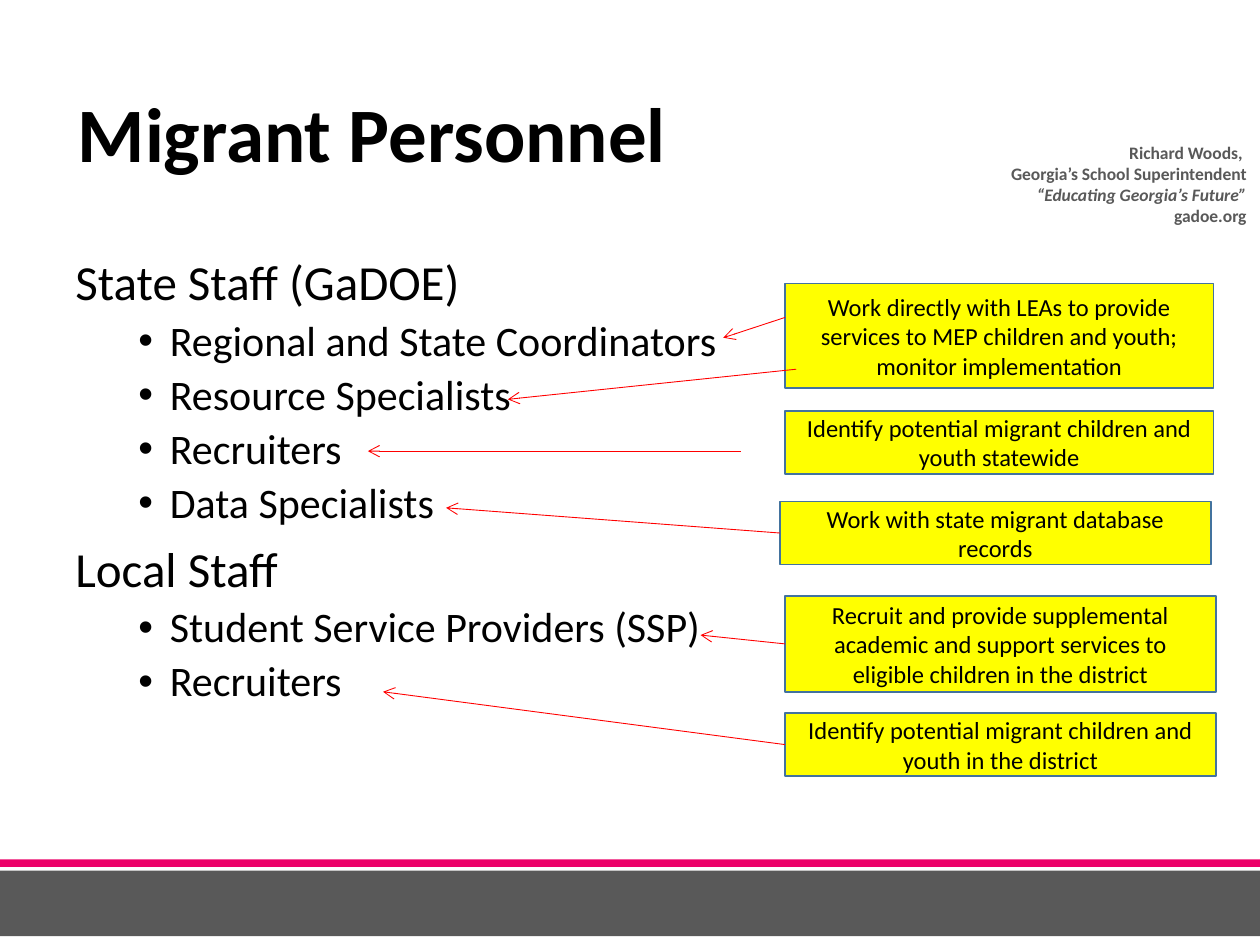
from lxml import etree
from pptx import Presentation
from pptx.dml.color import RGBColor
from pptx.enum import shapes, text
from pptx.oxml.ns import qn
from pptx.util import Pt

FONT = "Calibri"
BLACK, GREY, PINK, YELLOW, BLUE, RED = (
    "000000", "595959", "EC0269", "FFFF00", "43739E", "FF0000")

STAFF = [
    ("State Staff (GaDOE)", [
        "Regional and State Coordinators", "Resource Specialists",
        "Recruiters", "Data Specialists"]),
    ("Local Staff", ["Student Service Providers (SSP)", "Recruiters"]),
]

# Box (left, top, width, height) and wording of each duty
DUTIES = [
    ((448.6, 162, 244.8, 59.8), "Work directly with LEAs to provide services to "
     "MEP children and youth; monitor implementation"),
    ((448.6, 234.7, 244.8, 36),
     "Identify potential migrant children and youth statewide"),
    ((445.7, 286.6, 246.2, 36), "Work with state migrant database records"),
    ((448.6, 340.6, 246.2, 54.7), "Recruit and provide supplemental academic and "
     "support services to eligible children in the district"),
    ((448.6, 407.5, 246.2, 36),
     "Identify potential migrant children and youth in the district"),
]

# Start is a point, or the index of the duty whose left side is joined
ARROWS = [
    ((448.6, 181.4), (413.3, 193)),
    ((455, 211), (290.2, 228.2)),
    ((423.4, 257.8), (210.2, 257.8)),
    (2, (254.9, 290.2)),
    (3, (400.3, 362.9)),
    (4, (218.9, 395.3)),
]


def color(value):
    return RGBColor.from_string(value)


def points(values):
    return [Pt(value) for value in values]


def style(para, size, tint=BLACK, bold=False, italic=False):
    for span in para.runs:
        font = span.font
        font.name, font.size, font.bold, font.italic = FONT, Pt(size), bold, italic
        font.color.rgb = color(tint)


def add_rect(page, box, fill, line=None):
    rect = page.shapes.add_shape(shapes.MSO_SHAPE.RECTANGLE, *points(box))
    rect.shadow.inherit = False
    rect.fill.solid()
    rect.fill.fore_color.rgb = color(fill)
    if line:
        rect.line.color.rgb = color(line)
        rect.line.width = Pt(1)
    else:
        rect.line.fill.background()
    return rect


def add_text(page, box, anchor):
    frame = page.shapes.add_textbox(*points(box)).text_frame
    frame.word_wrap = True
    frame.vertical_anchor = anchor
    return frame


def add_footer(page, box):
    left, top, width, height = box
    add_rect(page, (left, top, width, 4.3), PINK)
    add_rect(page, (left, top + 6.4, width, height - 6.4), GREY)


def add_credit(page, box):
    frame = add_text(page, box, text.MSO_ANCHOR.MIDDLE)
    frame.text = ("Richard Woods, \nGeorgia’s School Superintendent\n"
                  "“Educating Georgia’s Future”\ngadoe.org")
    for para in frame.paragraphs:
        para.alignment = text.PP_ALIGN.RIGHT
        style(para, 10, GREY, bold=True, italic=para.text.startswith("“"))


def add_title(page, box):
    frame = add_text(page, box, text.MSO_ANCHOR.MIDDLE)
    frame.text = "Migrant Personnel"
    frame.paragraphs[0].line_spacing = 0.9
    style(frame.paragraphs[0], 44, bold=True)


def add_bullet(para):
    props = para._p.get_or_add_pPr()
    props.set("marL", str(Pt(54)))
    props.set("indent", str(-Pt(18)))
    etree.SubElement(props, qn("a:buFont")).set("typeface", "Arial")
    etree.SubElement(props, qn("a:buChar")).set("char", "•")


def add_staff(page, box):
    frame = add_text(page, box, text.MSO_ANCHOR.TOP)
    lines = [(line, level) for group, roles in STAFF
             for line, level in [(group, 0)] + [(role, 1) for role in roles]]
    frame.text = "\n".join(line for line, level in lines)
    for index, (para, (line, level)) in enumerate(zip(frame.paragraphs, lines)):
        if level:
            para.level = level
            add_bullet(para)
        para.line_spacing = 0.9
        if index:
            para.space_before = Pt(5 if level else 10)
        style(para, 24 if level else 28)


def add_duty(page, box, wording):
    rect = add_rect(page, box, YELLOW, BLUE)
    frame = rect.text_frame
    frame.word_wrap = True
    frame.vertical_anchor = text.MSO_ANCHOR.MIDDLE
    frame.text = wording
    frame.paragraphs[0].alignment = text.PP_ALIGN.CENTER
    style(frame.paragraphs[0], 14)
    return rect


def add_arrow(page, start, end, duties):
    joined = isinstance(start, int)
    begin = end if joined else start
    arrow = page.shapes.add_connector(
        shapes.MSO_CONNECTOR.STRAIGHT, *points(begin + end))
    if joined:
        arrow.begin_connect(duties[start], 1)
    arrow.line.color.rgb = color(RED)
    arrow.line.width = Pt(0.5)
    etree.SubElement(arrow.line._get_or_add_ln(),
                     qn("a:tailEnd")).set("type", "arrow")
    etree.SubElement(arrow._element.spPr, qn("a:effectLst"))


def main():
    deck = Presentation()
    deck.slide_width, deck.slide_height = Pt(720), Pt(540)
    page = deck.slides.add_slide(deck.slide_layouts[6])

    # Frame of the page
    add_footer(page, (0, 491.1, 720, 43.8))
    add_credit(page, (567.4, 79.9, 151.9, 50.4))

    # Title and staff list
    add_title(page, (37.4, 26.6, 506.9, 104.4))
    add_staff(page, (36, 144, 634.3, 342.7))

    # Duties and the arrows to the staff who hold them
    duties = [add_duty(page, box, wording) for box, wording in DUTIES]
    for start, end in ARROWS:
        add_arrow(page, start, end, duties)

    deck.save("out.pptx")


if __name__ == "__main__":
    main()
